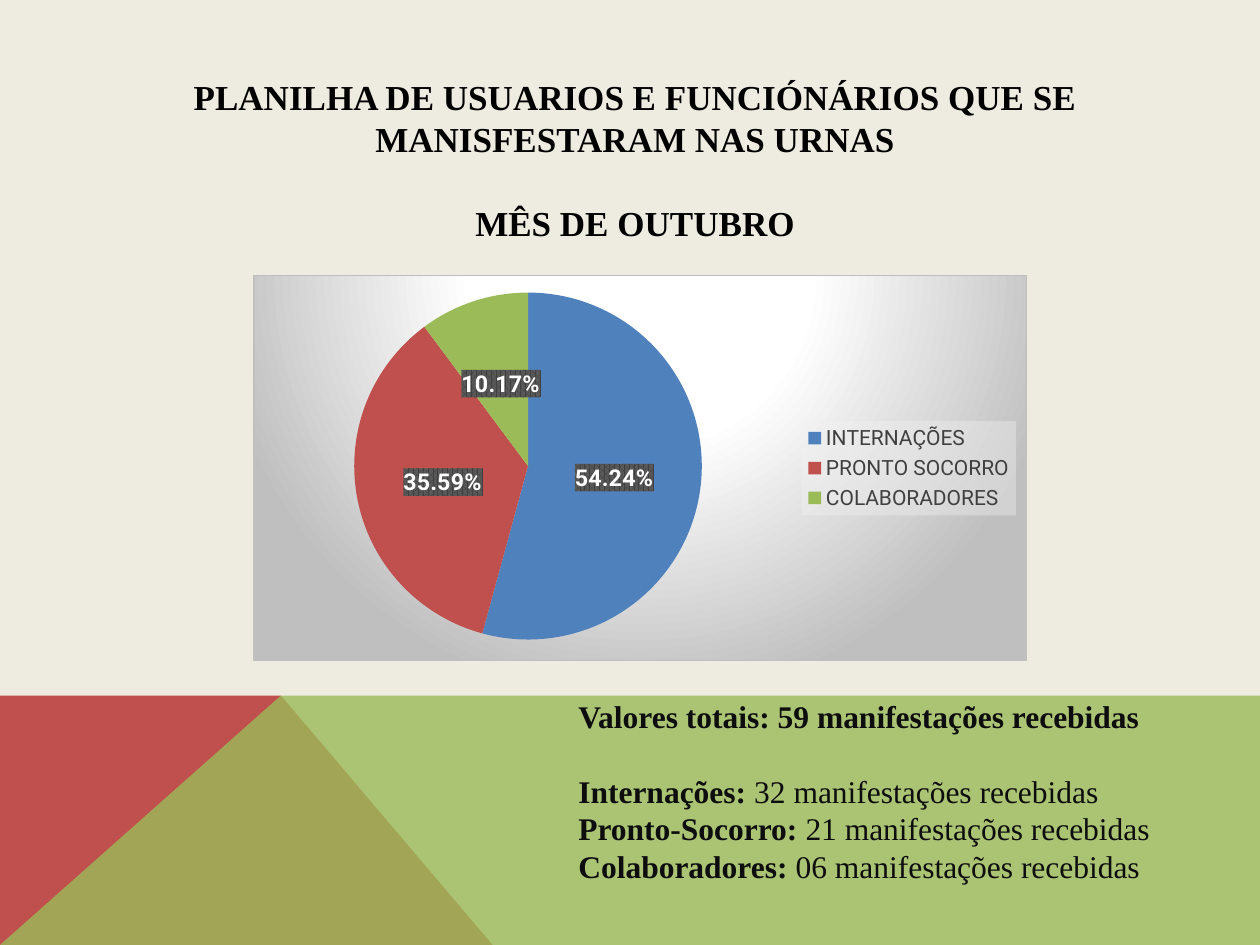
from dataclasses import dataclass

from lxml import etree
from pptx import Presentation
from pptx.chart.data import CategoryChartData
from pptx.dml.color import RGBColor
from pptx.enum.chart import XL_CHART_TYPE, XL_LABEL_POSITION, XL_LEGEND_POSITION
from pptx.enum.text import MSO_ANCHOR, MSO_AUTO_SIZE, PP_ALIGN
from pptx.oxml import parse_xml
from pptx.oxml.ns import nsdecls, qn
from pptx.util import Inches, Pt

PIE = XL_CHART_TYPE.PIE
LABEL_CENTER = XL_LABEL_POSITION.CENTER
LEGEND_RIGHT = XL_LEGEND_POSITION.RIGHT
TOP = MSO_ANCHOR.TOP
FIXED = MSO_AUTO_SIZE.NONE
CENTER, JUSTIFY = PP_ALIGN.CENTER, PP_ALIGN.JUSTIFY


@dataclass(frozen=True)
class Theme:
    paper: str = "EEECE1"
    blue: str = "4F81BD"
    red: str = "C0504D"
    green: str = "9BBB59"
    black: str = "000000"
    ink: str = "0D0D0D"
    white: str = "FFFFFF"
    silver: str = "BFBFBF"
    mist: str = "F2F2F2"
    dark: str = "404040"
    gray: str = "595959"
    serif: str = "Times New Roman"
    sans: str = "Roboto"
    title_size: float = 20
    title_line: float = 24
    body_size: float = 18
    body_line: float = 21.5
    label_size: float = 13.3
    legend_size: float = 12
    chart_size: float = 10


THEME = Theme()

TITLE = [
    [("PLANILHA DE USUARIOS E FUNCIÓNÁRIOS QUE SE MANISFESTARAM NAS URNAS", True)],
    [("MÊS DE OUTUBRO", True)],
]
TOTALS = [
    [("Valores totais: 59 manifestações recebidas", True)],
    [("Internações: ", True), ("32 manifestações recebidas", False)],
    [("Pronto-Socorro: ", True), ("21 manifestações recebidas", False)],
    [("Colaboradores: ", True), ("06 manifestações recebidas", False)],
]
SHARES = [
    ("INTERNAÇÕES", 54.24, THEME.blue),
    ("PRONTO SOCORRO", 35.59, THEME.red),
    ("COLABORADORES", 10.17, THEME.green),
]


def rgb(code):
    return RGBColor.from_string(code)


def format_font(font, size, color, face, bold=False):
    font.size, font.name, font.bold = Pt(size), face, bold
    font.color.rgb = rgb(color)


def place(shape, box):
    shape.left, shape.top, shape.width, shape.height = map(Inches, box)


def write_text(frame, lines, *, size, line, color, align):
    """Write lines of (text, bold) spans, with one line of space after the first."""
    frame.word_wrap = True
    frame.auto_size = FIXED
    frame.vertical_anchor = TOP
    for index, spans in enumerate(lines):
        para = frame.paragraphs[0] if index == 0 else frame.add_paragraph()
        para.alignment = align
        para.line_spacing = Pt(line)
        para.space_before = Pt(line if index == 1 else 0)
        para.space_after = Pt(0)
        props = para._p.get_or_add_pPr()
        props.set("marL", "0")
        props.set("indent", "0")
        etree.SubElement(props, qn("a:buNone"))
        for text, bold in spans:
            span = para.add_run()
            span.text = text
            format_font(span.font, size, color, THEME.serif, bold)


def add_band(page, box):
    """Place the red corner and the translucent green band behind the text."""
    left, top, width, height = box
    bottom, peak = top + height, left + 2.23
    outlines = [
        ([(left, bottom), (left, top), (peak, top), (left + 3.91, bottom)],
         THEME.red, 100),
        ([(left, bottom), (peak, top), (left + width, top), (left + width, bottom)],
         THEME.green, 80),
    ]
    for depth, (points, color, opacity) in enumerate(outlines):
        corners = [(Inches(x), Inches(y)) for x, y in points]
        builder = page.shapes.build_freeform(*corners[0], scale=1.0)
        builder.add_line_segments(corners[1:], close=True)
        shape = builder.convert_to_shape()
        shape.shadow.inherit = False
        shape.fill.solid()
        shape.fill.fore_color.rgb = rgb(color)
        shape.line.fill.background()
        if opacity < 100:
            paint = shape.element.spPr.find(".//" + qn("a:srgbClr"))
            etree.SubElement(paint, qn("a:alpha"), val=str(opacity * 1000))
        page.shapes.element.insert(2 + depth, shape.element)


def add_title(page, box):
    title = page.shapes.title
    place(title, box)
    write_text(title.text_frame, TITLE, size=THEME.title_size,
               line=THEME.title_line, color=THEME.black, align=CENTER)


def add_totals(page, box):
    body = page.placeholders[1]
    place(body, box)
    write_text(body.text_frame, TOTALS, size=THEME.body_size,
               line=THEME.body_line, color=THEME.ink, align=JUSTIFY)


def paint_after(element, fill):
    """Give a chart part the fill, right after the element that must precede it."""
    element.addnext(parse_xml(f"<c:spPr {nsdecls('c', 'a')}>{fill}</c:spPr>"))


def color_xml(code, inner=""):
    return f'<a:srgbClr val="{code}">{inner}</a:srgbClr>'


def add_pie(page, box):
    data = CategoryChartData()
    data.categories = [name for name, _, _ in SHARES]
    data.add_series("Series 1", [value for _, value, _ in SHARES])
    chart = page.shapes.add_chart(PIE, *map(Inches, box), data).chart
    chart.has_title = False
    format_font(chart.font, THEME.chart_size, THEME.black, THEME.sans)

    # Slices and percentages
    plot = chart.plots[0]
    plot.vary_by_categories = True
    for index, (_, _, color) in enumerate(SHARES):
        fill = plot.series[0].points[index].format.fill
        fill.solid()
        fill.fore_color.rgb = rgb(color)
    plot.has_data_labels = True
    labels = plot.data_labels
    labels.show_value, labels.show_percentage = False, True
    labels.number_format, labels.number_format_is_linked = "0.00%", False
    labels.position = LABEL_CENTER
    format_font(labels.font, THEME.label_size, THEME.white, THEME.sans, True)

    # Legend
    chart.has_legend = True
    chart.legend.position = LEGEND_RIGHT
    chart.legend.include_in_layout = False
    format_font(chart.legend.font, THEME.legend_size, THEME.dark, THEME.sans)

    # Backgrounds of the labels, the legend and the whole chart
    root = chart.element
    paint_after(root.xpath(".//c:dLbls/c:numFmt")[0],
                f'<a:pattFill prst="pct75"><a:fgClr>{color_xml(THEME.dark)}</a:fgClr>'
                f'<a:bgClr>{color_xml(THEME.gray)}</a:bgClr></a:pattFill>')
    veil = color_xml(THEME.mist, '<a:alpha val="39000"/>')
    paint_after(root.xpath(".//c:legend/c:overlay")[0],
                f"<a:solidFill>{veil}</a:solidFill>")
    stops = "".join(
        f'<a:gs pos="{share * 1000}">{color_xml(color)}</a:gs>'
        for share, color in [(0, THEME.white), (39, THEME.white), (100, THEME.silver)])
    paint_after(root.xpath("./c:chart")[0],
                f'<a:gradFill><a:gsLst>{stops}</a:gsLst><a:path path="circle">'
                '<a:fillToRect l="50000" t="-80000" r="50000" b="180000"/></a:path>'
                f'</a:gradFill><a:ln w="{Pt(0.75)}"><a:solidFill>'
                f"{color_xml(THEME.silver)}</a:solidFill></a:ln>")

    # Position of the pie as shares of the chart
    area = root.xpath(".//c:plotArea")[0]
    for old in area.findall(qn("c:layout")):
        area.remove(old)
    spots = "".join(f'<c:{side} val="{share}"/>' for side, share in
                    [("x", 0.13), ("y", 0.04), ("w", 0.45), ("h", 0.91)])
    area.insert(0, parse_xml(
        f'<c:layout {nsdecls("c")}><c:manualLayout><c:layoutTarget val="inner"/>'
        f'<c:xMode val="edge"/><c:yMode val="edge"/>{spots}'
        "</c:manualLayout></c:layout>"))


def main():
    deck = Presentation()
    deck.slide_width, deck.slide_height = Inches(10), Inches(7.5)
    page = deck.slides.add_slide(deck.slide_layouts[1])
    page.background.fill.solid()
    page.background.fill.fore_color.rgb = rgb(THEME.paper)
    add_band(page, (0, 5.52, 10, 1.98))
    add_title(page, (0.39, 0.55, 9.3, 1.78))
    add_totals(page, (4.49, 5.48, 5.47, 1.62))
    add_pie(page, (2.01, 2.18, 6.14, 3.07))
    deck.save("out.pptx")


if __name__ == "__main__":
    main()
